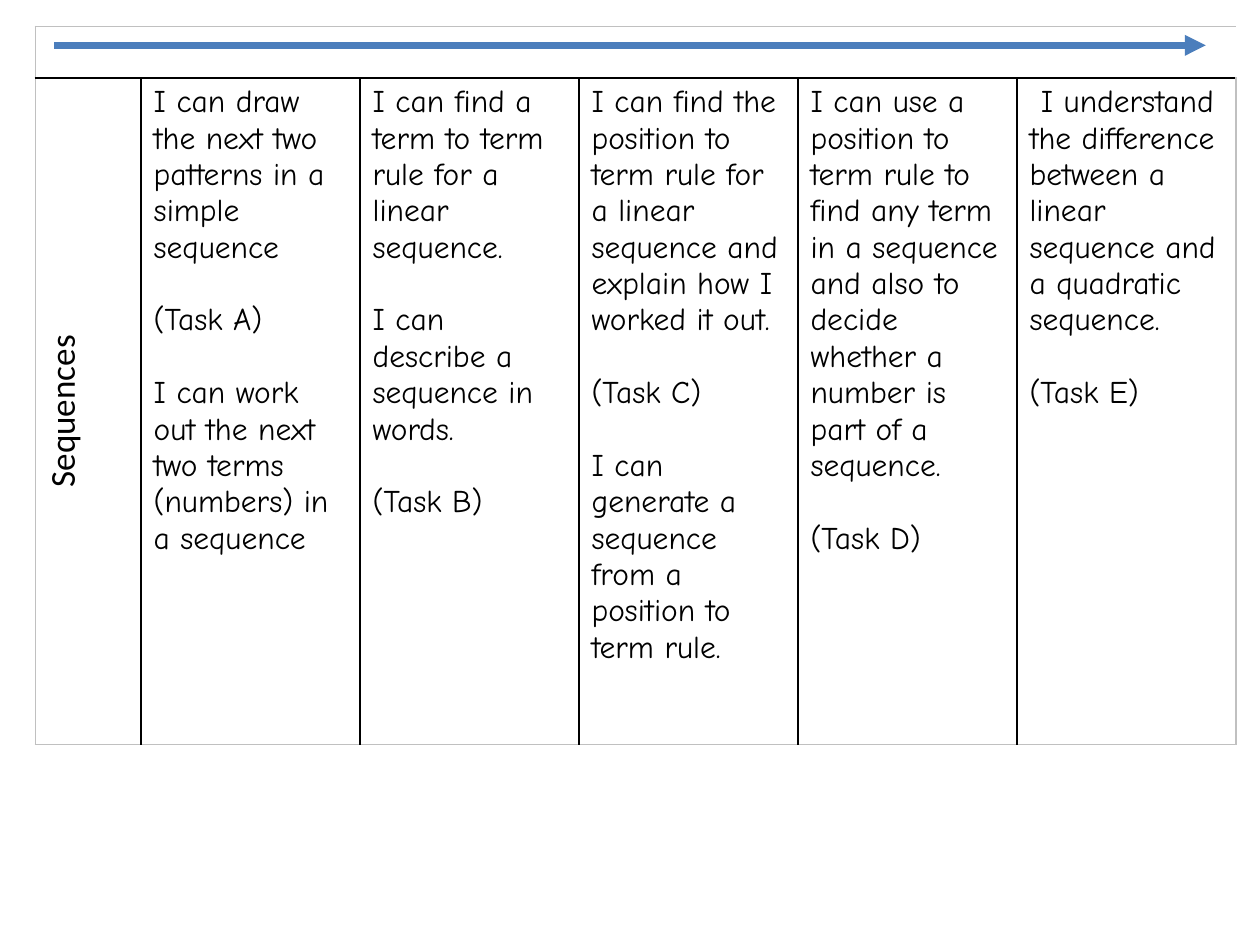
from dataclasses import dataclass

from lxml import etree
from pptx import Presentation
from pptx.dml.color import RGBColor
from pptx.enum.shapes import MSO_CONNECTOR
from pptx.enum.text import PP_ALIGN
from pptx.oxml.ns import qn
from pptx.util import Inches, Pt

STRAIGHT = MSO_CONNECTOR.STRAIGHT
CENTER = PP_ALIGN.CENTER
BLANK_LAYOUT = 6


@dataclass(frozen=True)
class Theme:
    ink: str = "000000"
    frame: str = "C0C0C0"
    arrow: str = "4B7EBC"
    topic_font: str = "Calibri"
    goal_font: str = "Comic Neue"
    topic_size: int = 20
    goal_size: int = 18
    goal_gap: float = 20.8
    rule_width: int = 1
    arrow_width: int = 4


THEME = Theme()
TOPIC = "Sequences"
GOALS = [
    ["I can draw the next two patterns in a simple sequence",
     "(Task A)",
     "I can work out the next two terms (numbers) in a sequence"],
    ["I can find a term to term rule for a linear sequence.",
     "I can describe a sequence in words.",
     "(Task B)"],
    ["I can find the position to term rule for a linear sequence "
     "and explain how I worked it out.",
     "(Task C)",
     "I can generate a sequence from a position to term rule."],
    ["I can use a position to term rule to find any term in a sequence "
     "and also to decide whether a number is part of a sequence.",
     "(Task D)"],
    ["I understand the difference between a linear sequence "
     "and a quadratic sequence.",
     "(Task E)"],
]


def set_borders(cell, colors):
    """Draw the left, right, top and bottom edges; None leaves an edge open."""
    tc_pr = cell._tc.get_or_add_tcPr()
    for side, color in zip("LRTB", colors):
        ln = etree.SubElement(tc_pr, qn(f"a:ln{side}"), w=str(Pt(THEME.rule_width)))
        if color is None:
            etree.SubElement(ln, qn("a:noFill"))
        else:
            fill = etree.SubElement(ln, qn("a:solidFill"))
            etree.SubElement(fill, qn("a:srgbClr"), val=color)


def write(cell, lines, font, size):
    tf = cell.text_frame
    for i, line in enumerate(lines):
        p = tf.add_paragraph() if i else tf.paragraphs[0]
        p.text = line
        p.font.name, p.font.size = font, Pt(size)
        p.font.color.rgb = RGBColor.from_string(THEME.ink)
        if i:
            p.space_before = Pt(THEME.goal_gap)


def add_goal_table(s, left, top, width, height):
    header_height, topic_width = Inches(0.41), Inches(0.84)
    last = len(GOALS)
    table = s.shapes.add_table(2, last + 1, left, top, width, height).table
    table.first_row = table.horz_banding = False
    table.rows[0].height = header_height
    table.rows[1].height = height - header_height
    for i, col in enumerate(table.columns):
        col.width = (width - topic_width) // last if i else topic_width

    # Grey frame outside, black rules inside
    for i in range(last + 1):
        at_left, at_right = i == 0, i == last
        set_borders(table.cell(0, i), (THEME.frame if at_left else None,
                                       THEME.frame if at_right else None,
                                       THEME.frame, THEME.ink))
        set_borders(table.cell(1, i), (THEME.frame if at_left else THEME.ink,
                                       THEME.frame if at_right else THEME.ink,
                                       THEME.ink, THEME.frame))
        for row in range(2):
            table.cell(row, i).fill.background()
    table.cell(0, 0).merge(table.cell(0, last))

    # Topic reads upwards
    topic = table.cell(1, 0)
    write(topic, [TOPIC], THEME.topic_font, THEME.topic_size)
    topic.text_frame.paragraphs[0].alignment = CENTER
    topic._tc.get_or_add_tcPr().set("vert", "vert270")

    # One column of goals per task
    for i, lines in enumerate(GOALS, 1):
        write(table.cell(1, i), lines, THEME.goal_font, THEME.goal_size)
    first = table.cell(1, last).text_frame.paragraphs[0]
    first._p.get_or_add_pPr().set("indent", str(Inches(0.09)))


def add_progress_arrow(s, left, y, width):
    arrow = s.shapes.add_connector(STRAIGHT, left, y, left + width, y)
    arrow.line.color.rgb = RGBColor.from_string(THEME.arrow)
    arrow.line.width = Pt(THEME.arrow_width)
    etree.SubElement(arrow.line._get_or_add_ln(), qn("a:tailEnd"), type="triangle")
    etree.SubElement(arrow._element.spPr, qn("a:effectLst"))


def main():
    prs = Presentation()
    prs.slide_width, prs.slide_height = Inches(10), Inches(7.5)
    s = prs.slides.add_slide(prs.slide_layouts[BLANK_LAYOUT])
    add_goal_table(s, Inches(0.28), Inches(0.21), Inches(9.53), Inches(5.7))
    add_progress_arrow(s, Inches(0.43), Inches(0.36), Inches(9.14))
    prs.save("out.pptx")


if __name__ == "__main__":
    main()
